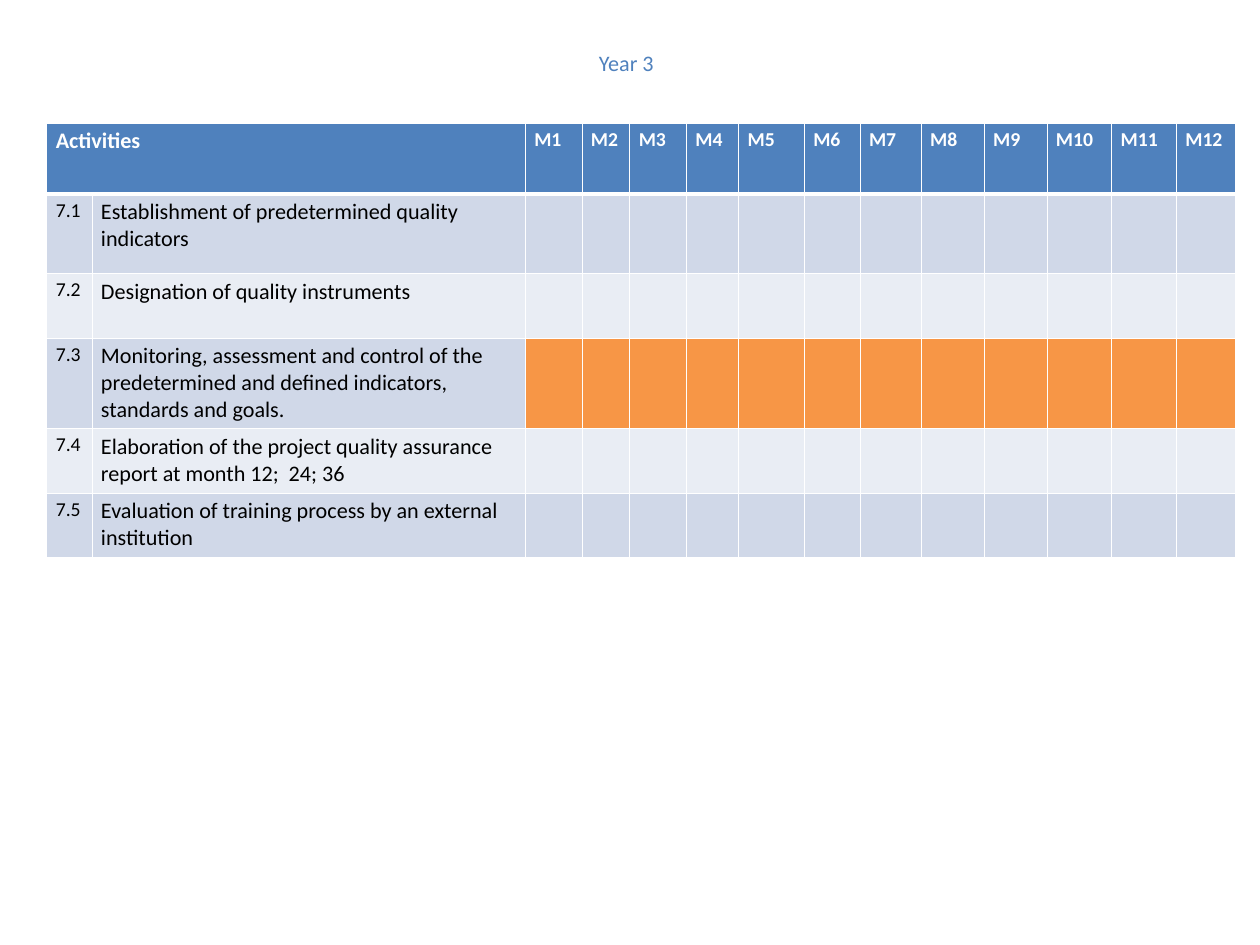
from dataclasses import dataclass

from lxml.etree import SubElement
from pptx import Presentation
from pptx.dml.color import RGBColor
from pptx.enum.text import MSO_ANCHOR, MSO_AUTO_SIZE, PP_ALIGN
from pptx.oxml.ns import qn
from pptx.util import Inches, Pt


@dataclass(frozen=True)
class Theme:
    font: str = "Calibri"
    accent: str = "4F81BD"
    planned: str = "F79646"
    bands: tuple = ("D0D8E8", "E9EDF4")
    light: str = "FFFFFF"
    dark: str = "000000"
    text_size: int = 18
    label_size: int = 16
    grid_width: int = 1
    header_rule_width: int = 3


THEME = Theme()

MONTHS = [f"M{number}" for number in range(1, 13)]
ACTIVITIES = [
    ("7.1", "Establishment of predetermined quality indicators"),
    ("7.2", "Designation of quality instruments"),
    ("7.3", "Monitoring, assessment and control of the predetermined and "
            "defined indicators, standards and goals."),
    ("7.4", "Elaboration of the project quality assurance report at month 12;  24; 36"),
    ("7.5", "Evaluation of training process by an external institution"),
]
PLANNED_ACTIVITIES = {"7.3"}

COLUMN_WIDTHS = [0.51, 4.89, 0.64, 0.54, 0.64, 0.59, 0.74,
                 0.63, 0.69, 0.71, 0.71, 0.73, 0.73, 0.67]
ROW_HEIGHTS = [0.8, 0.9, 0.73, 1.02, 0.73, 0.73]


def add_run(paragraph, text, size, color, bold=False):
    run = paragraph.add_run()
    run.text = text
    run.font.name = THEME.font
    run.font.size = Pt(size)
    run.font.bold = bold
    run.font.color.rgb = RGBColor.from_string(color)


def add_borders(cell, top, bottom):
    """Draw the cell's white grid lines; top and bottom are widths in points."""
    properties = cell._tc.get_or_add_tcPr()
    widths = {"a:lnL": THEME.grid_width, "a:lnR": THEME.grid_width,
              "a:lnT": top, "a:lnB": bottom}
    for position, (tag, width) in enumerate(widths.items()):
        line = SubElement(properties, qn(tag), w=str(Pt(width)))
        fill = SubElement(line, qn("a:solidFill"))
        SubElement(fill, qn("a:srgbClr"), val=THEME.light)
        properties.insert(position, line)  # lines come before the cell fill


def style_cell(cell, fill, row):
    cell.fill.solid()
    cell.fill.fore_color.rgb = RGBColor.from_string(fill)
    add_borders(cell,
                top=THEME.header_rule_width if row == 1 else THEME.grid_width,
                bottom=THEME.header_rule_width if row == 0 else THEME.grid_width)


def place_title(slide, text, left, top, width, height):
    title = slide.shapes.title
    title.left, title.top, title.width, title.height = map(
        Inches, (left, top, width, height))
    frame = title.text_frame
    frame.word_wrap = True
    frame.auto_size = MSO_AUTO_SIZE.SHAPE_TO_FIT_TEXT
    frame.vertical_anchor = MSO_ANCHOR.TOP
    paragraph = frame.paragraphs[0]
    paragraph.alignment = PP_ALIGN.LEFT
    add_run(paragraph, text, THEME.text_size, THEME.accent)


def fill_header(table):
    for column in range(len(COLUMN_WIDTHS)):
        style_cell(table.cell(0, column), THEME.accent, row=0)
    heading = table.cell(0, 0)
    heading.merge(table.cell(0, 1))
    add_run(heading.text_frame.paragraphs[0], "Activities",
            THEME.text_size, THEME.light, bold=True)
    for column, month in enumerate(MONTHS, start=2):
        add_run(table.cell(0, column).text_frame.paragraphs[0], month,
                THEME.label_size, THEME.light, bold=True)


def fill_activity(table, row, number, activity):
    band = THEME.bands[(row - 1) % len(THEME.bands)]
    month_fill = THEME.planned if number in PLANNED_ACTIVITIES else band
    for column in range(len(COLUMN_WIDTHS)):
        style_cell(table.cell(row, column), band if column < 2 else month_fill, row)
    add_run(table.cell(row, 0).text_frame.paragraphs[0], number,
            THEME.label_size, THEME.dark)
    add_run(table.cell(row, 1).text_frame.paragraphs[0], activity,
            THEME.text_size, THEME.dark)


def add_schedule(slide, left, top):
    table = slide.shapes.add_table(
        len(ROW_HEIGHTS), len(COLUMN_WIDTHS), Inches(left), Inches(top),
        Inches(sum(COLUMN_WIDTHS)), Inches(sum(ROW_HEIGHTS))).table
    for column, width in zip(table.columns, COLUMN_WIDTHS):
        column.width = Inches(width)
    for row, height in zip(table.rows, ROW_HEIGHTS):
        row.height = Inches(height)
    fill_header(table)
    for row, (number, activity) in enumerate(ACTIVITIES, start=1):
        fill_activity(table, row, number, activity)


def main():
    presentation = Presentation()
    presentation.slide_width = Inches(14.22)
    presentation.slide_height = Inches(10.67)
    title_only = presentation.slide_layouts[5]
    slide = presentation.slides.add_slide(title_only)
    place_title(slide, "Year 3", left=6.66, top=0.51, width=7.3, height=0.4)
    add_schedule(slide, left=0.53, top=1.39)
    presentation.save("out.pptx")


if __name__ == "__main__":
    main()
